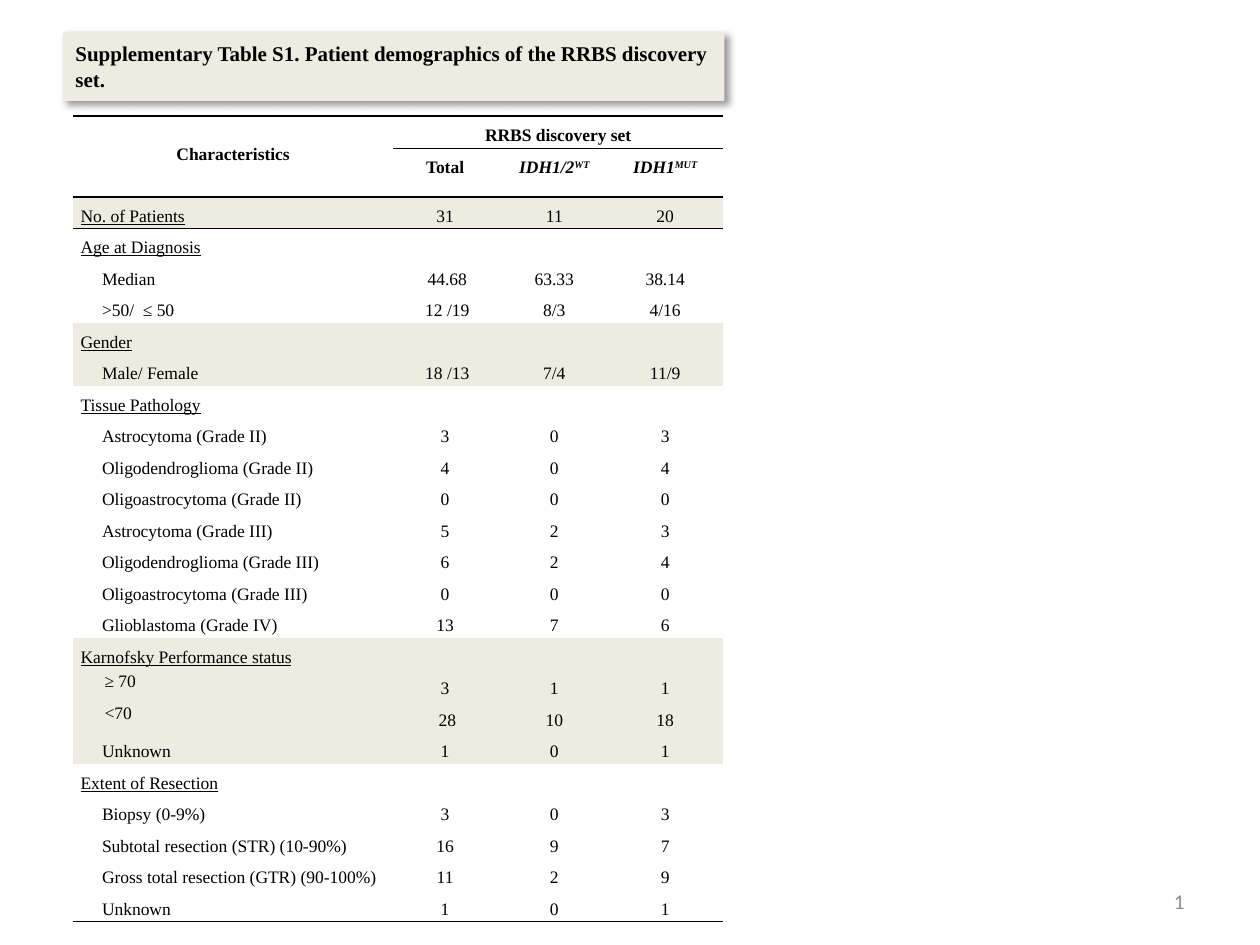
from dataclasses import dataclass

from lxml import etree
from pptx import Presentation
from pptx.dml.color import RGBColor
from pptx.enum import shapes, text
from pptx.oxml import ns
from pptx.util import Inches, Pt


@dataclass(frozen=True)
class Theme:
    ink: str = "000000"
    band: str = "EEECE1"
    muted: str = "8C8C8C"
    serif: str = "Times New Roman"
    sans: str = "Calibri"
    title_size: int = 12
    table_size: int = 10


THEME = Theme()
NO_GRID_STYLE = "{2D5ABB26-0587-4C30-8999-92F81FD0307C}"
COLUMN_WIDTHS = [2.54, 0.86, 0.84, 0.92]
HEADER_HEIGHTS = [0.26, 0.27]
ROW_HEIGHT = 0.25

# Each group: (banded, heading with its own values, [(label, values), ...])
GROUPS = [
    (True, ("No. of Patients", ["31 ", "11", "20"]), []),
    (False, ("Age at Diagnosis", []), [
        ("Median", ["44.68", "63.33", "38.14"]),
        (">50/  ≤ 50", ["12 /19", "8/3", "4/16"]),
    ]),
    (True, ("Gender", []), [
        ("Male/ Female", ["18 /13", "7/4", "11/9"]),
    ]),
    (False, ("Tissue Pathology", []), [
        ("Astrocytoma (Grade II)", ["3 ", "0", "3"]),
        ("Oligodendroglioma (Grade II)", ["4 ", "0", "4"]),
        ("Oligoastrocytoma (Grade II)", ["0 ", "0", "0"]),
        ("Astrocytoma (Grade III)", ["5 ", "2", "3"]),
        ("Oligodendroglioma (Grade III)", ["6 ", "2", "4"]),
        ("Oligoastrocytoma (Grade III)", ["0 ", "0", "0"]),
        ("Glioblastoma (Grade IV)", ["13 ", "7", "6"]),
    ]),
    (True, ("Karnofsky Performance status", []), [
        ("≥ 70", ["3 ", "1", "1"]),
        ("<70", ["28", "10", "18"]),
        ("Unknown", ["1 ", "0", "1"]),
    ]),
    (False, ("Extent of Resection", []), [
        ("Biopsy (0-9%)", ["3 ", "0", "3"]),
        ("Subtotal resection (STR) (10-90%)", ["16 ", "9", "7"]),
        ("Gross total resection (GTR) (90-100%)", ["11 ", "2", "9"]),
        ("Unknown", ["1 ", "0", "1"]),
    ]),
]
TIGHT_LABELS = {"≥ 70", "<70"}


def set_font(font, size, color=THEME.ink, name=THEME.serif, bold=False):
    font.size, font.name, font.bold = Pt(size), name, bold
    font.color.rgb = RGBColor.from_string(color)


def add_xml(parent, tag, **attributes):
    element = etree.SubElement(parent, ns.qn(tag))
    for key, value in attributes.items():
        element.set(key, str(value))
    return element


def add_shadow(shape):
    effects = add_xml(shape._element.spPr, "a:effectLst")
    shadow = add_xml(effects, "a:outerShdw", blurRad=Pt(4), dist=Pt(3),
                     dir=45 * 60000, algn="tl", rotWithShape=0)
    color = add_xml(shadow, "a:srgbClr", val=THEME.ink)
    add_xml(color, "a:alpha", val=40000)


def add_rule(cell, *edges):
    """Draw a black line on the given cell edges, in the order lnT, lnB."""
    properties = cell._tc.get_or_add_tcPr()
    for position, edge in enumerate(edges):
        line = etree.Element(ns.qn(f"a:{edge}"), w=str(Pt(1)))
        add_xml(add_xml(line, "a:solidFill"), "a:srgbClr", val=THEME.ink)
        properties.insert(position, line)


def fill_cell(cell, content="", spacing=1.5, align=text.PP_ALIGN.CENTER,
              bold=False, banded=False, inset=0.06):
    cell.margin_left = cell.margin_right = Inches(inset)
    cell.margin_top = cell.margin_bottom = 0
    if banded:
        cell.fill.solid()
        cell.fill.fore_color.rgb = RGBColor.from_string(THEME.band)
    paragraph = cell.text_frame.paragraphs[0]
    paragraph.text = content
    paragraph.alignment = align
    if not content:
        add_xml(paragraph._p, "a:endParaRPr", sz=THEME.table_size * 100)
        return paragraph
    paragraph.line_spacing = spacing
    set_font(paragraph.runs[0].font, THEME.table_size, bold=bold)
    return paragraph


def fill_gene_cell(cell, gene, status):
    """Italic gene name with its status as a superscript."""
    paragraph = fill_cell(cell, gene, bold=True)
    superscript = paragraph.add_run()
    superscript.text = status
    set_font(superscript.font, THEME.table_size, bold=True)
    superscript._r.get_or_add_rPr().set("baseline", "30000")
    for run in paragraph.runs:
        run.font.italic = True


def fill_header(table):
    characteristics, discovery_set = table.cell(0, 0), table.cell(0, 1)
    characteristics.merge(table.cell(1, 0))
    discovery_set.merge(table.cell(0, 3))
    fill_cell(characteristics, "Characteristics", spacing=2.5, bold=True)
    fill_cell(discovery_set, "RRBS discovery set", bold=True)
    for column in (2, 3):
        fill_cell(table.cell(0, column))
    fill_cell(table.cell(1, 1), "Total ", bold=True)
    fill_gene_cell(table.cell(1, 2), "IDH1/2", "WT")
    fill_gene_cell(table.cell(1, 3), "IDH1", "MUT")
    for row in (0, 1):
        for column in range(4):
            add_rule(table.cell(row, column), "lnT", "lnB")


def fill_row(table, row, label, values, banded, heading):
    tight = label in TIGHT_LABELS
    paragraph = fill_cell(table.cell(row, 0), label, 1.15 if tight else 1.5,
                          text.PP_ALIGN.LEFT, banded=banded,
                          inset=0.04 if tight else 0.06)
    if heading:
        paragraph.runs[0].font.underline = True
    else:
        indent = Inches(0.21 if tight else 0.17)
        paragraph._p.get_or_add_pPr().set("marL", str(indent))
    for column, value in enumerate(values or [""] * 3, start=1):
        fill_cell(table.cell(row, column), value, banded=banded)


def add_demographics(slide, left, top):
    rows = [(label, values, banded, heading)
            for banded, head, members in GROUPS
            for heading, (label, values) in
            [(True, head)] + [(False, member) for member in members]]
    heights = HEADER_HEIGHTS + [ROW_HEIGHT] * len(rows)
    frame = slide.shapes.add_table(
        len(heights), len(COLUMN_WIDTHS), Inches(left), Inches(top),
        Inches(sum(COLUMN_WIDTHS)), Inches(sum(heights)))
    table = frame.table
    table.first_row = table.horz_banding = False
    table._tbl.tblPr.find(ns.qn("a:tableStyleId")).text = NO_GRID_STYLE
    for column, width in zip(table.columns, COLUMN_WIDTHS):
        column.width = Inches(width)
    for row, height in zip(table.rows, heights):
        row.height = Inches(height)

    fill_header(table)
    first = len(HEADER_HEIGHTS)
    for row, entry in enumerate(rows, start=first):
        fill_row(table, row, *entry)
    for column in range(len(COLUMN_WIDTHS)):
        add_rule(table.cell(first, column), "lnT", "lnB")
        add_rule(table.cell(len(heights) - 1, column), "lnB")


def add_title(slide, left, top, width, height):
    title = slide.shapes.add_shape(
        shapes.MSO_SHAPE.RECTANGLE,
        Inches(left), Inches(top), Inches(width), Inches(height))
    title.fill.solid()
    title.fill.fore_color.rgb = RGBColor.from_string(THEME.band)
    title.line.fill.background()
    add_shadow(title)
    frame = title.text_frame
    frame.text = ("Supplementary Table S1. Patient demographics of the "
                  "RRBS discovery set.")
    frame.word_wrap = True
    frame.vertical_anchor = text.MSO_ANCHOR.MIDDLE
    frame.paragraphs[0].alignment = text.PP_ALIGN.LEFT
    set_font(frame.paragraphs[0].runs[0].font, THEME.title_size, bold=True)


def add_page_number(slide, left, top, width, height):
    number = slide.shapes.add_textbox(
        Inches(left), Inches(top), Inches(width), Inches(height))
    frame = number.text_frame
    frame.text = "1"
    frame.word_wrap = True
    frame.vertical_anchor = text.MSO_ANCHOR.MIDDLE
    frame.paragraphs[0].alignment = text.PP_ALIGN.RIGHT
    set_font(frame.paragraphs[0].runs[0].font, THEME.title_size, THEME.muted, THEME.sans)


def main():
    deck = Presentation()
    deck.slide_width, deck.slide_height = Inches(10), Inches(7.5)
    slide = deck.slides.add_slide(deck.slide_layouts[6])
    add_title(slide, 0.5, 0.25, 5.25, 0.55)
    add_demographics(slide, 0.58, 0.92)
    add_page_number(slide, 7.17, 6.95, 2.33, 0.4)
    deck.save("out.pptx")


if __name__ == "__main__":
    main()
